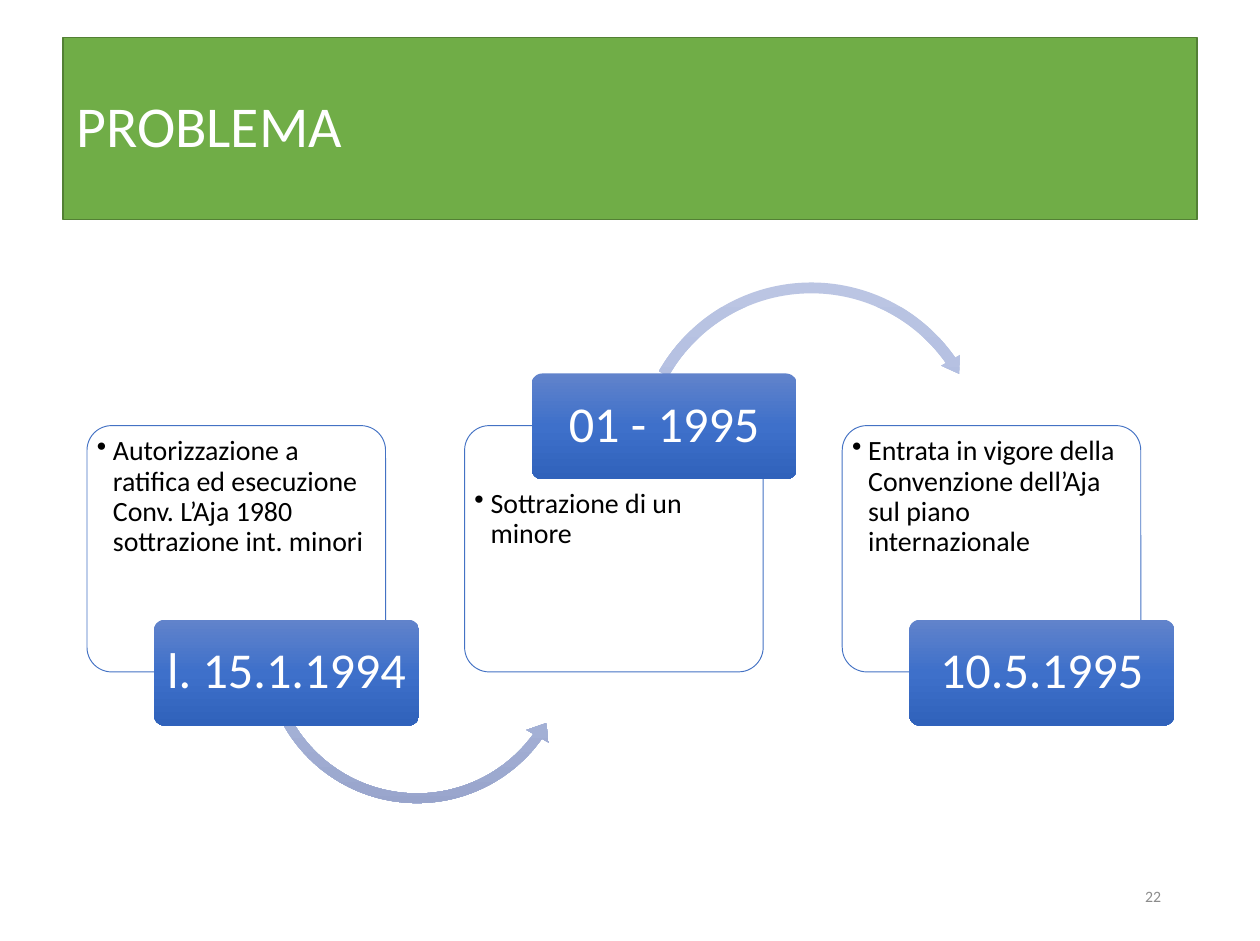
from copy import deepcopy
from dataclasses import dataclass

from lxml import etree
from pptx import Presentation
from pptx.dml.color import RGBColor
from pptx.enum import shapes, text
from pptx.oxml.ns import qn
from pptx.util import Inches, Pt


@dataclass(frozen=True)
class Theme:
    font: str = "Calibri"
    white: str = "FFFFFF"
    black: str = "000000"
    banner: str = "70AD47"
    banner_line: str = "538035"
    card_line: str = "4472C4"
    number: str = "8C8C8C"
    date_gradient: tuple = ("6183CB", "3E70CA", "3062BB")
    arrow_gradient: tuple = ("BBC5E3", "AEBBE0", "98A4CB")
    title_size: float = 31.1
    date_size: float = 27
    body_size: float = 15
    number_size: float = 8.5


def rgb(code):
    return RGBColor.from_string(code)


class SlideBuilder:
    def __init__(self, slide, theme):
        self.slide = slide
        self.theme = theme

    def set_text(self, shape, words, size, color, align, anchor, margins=None, bullet=False):
        """Fill a shape with one paragraph; margins are left, top, right, bottom."""
        frame = shape.text_frame
        frame.word_wrap = True
        frame.auto_size = text.MSO_AUTO_SIZE.NONE
        frame.vertical_anchor = anchor
        if margins:
            (frame.margin_left, frame.margin_top,
             frame.margin_right, frame.margin_bottom) = map(Inches, margins)
        frame.text = words
        paragraph = frame.paragraphs[0]
        paragraph.alignment = align
        paragraph.line_spacing = 0.9
        if bullet:
            properties = paragraph._p.get_or_add_pPr()
            properties.set("marL", str(Inches(0.12)))
            properties.set("indent", str(Inches(-0.12)))
            etree.SubElement(properties, qn("a:buChar")).set("char", "•")
        paragraph.font.name = self.theme.font
        paragraph.font.size = Pt(size)
        paragraph.font.color.rgb = rgb(color)

    def shape(self, kind, left, top, width, height, adjustments):
        shape = self.slide.shapes.add_shape(
            kind, Inches(left), Inches(top), Inches(width), Inches(height))
        shape.shadow.inherit = False
        for index, value in enumerate(adjustments):
            shape.adjustments[index] = value
        return shape

    def shade(self, shape, colors):
        """Give a borderless vertical gradient with evenly spaced colours."""
        shape.line.fill.background()
        shape.fill.gradient()
        shape.fill.gradient_angle = 270
        stop_list = shape._element.spPr.find(".//" + qn("a:gsLst"))
        while len(stop_list) < len(colors):
            stop_list.append(deepcopy(stop_list[0]))
        for index, (stop, color) in enumerate(zip(shape.fill.gradient_stops, colors)):
            stop.color.rgb = rgb(color)
            stop.position = index / (len(colors) - 1)

    def title(self, words):
        banner = self.slide.shapes.title
        banner.left, banner.top = Inches(0.47), Inches(0.28)
        banner.width, banner.height = Inches(8.47), Inches(1.36)
        banner.fill.solid()
        banner.fill.fore_color.rgb = rgb(self.theme.banner)
        banner.line.color.rgb = rgb(self.theme.banner_line)
        banner.line.width = Pt(1)
        self.set_text(banner, words, self.theme.title_size, self.theme.white,
                      text.PP_ALIGN.LEFT, text.MSO_ANCHOR.MIDDLE)

    def card(self, left, top, words, text_top):
        card = self.shape(shapes.MSO_SHAPE.ROUNDED_RECTANGLE, left, top, 2.23, 1.84, [0.1])
        card.fill.solid()
        card.fill.fore_color.rgb = rgb(self.theme.white)
        card.line.color.rgb = rgb(self.theme.card_line)
        card.line.width = Pt(0.5)
        self.set_text(card, words, self.theme.body_size, self.theme.black, text.PP_ALIGN.LEFT,
                      text.MSO_ANCHOR.TOP, (0.02, text_top, 0.02, 0.03), bullet=True)

    def date(self, left, top, words):
        date = self.shape(shapes.MSO_SHAPE.ROUNDED_RECTANGLE, left, top, 1.98, 0.79, [0.1])
        self.shade(date, self.theme.date_gradient)
        self.set_text(date, words, self.theme.date_size, self.theme.white, text.PP_ALIGN.CENTER,
                      text.MSO_ANCHOR.MIDDLE, (0.06, 0.04, 0.06, 0.04))

    def arc_arrow(self, kind, left, top, size, adjustments):
        arrow = self.shape(kind, left, top, size, size, adjustments)
        self.shade(arrow, self.theme.arrow_gradient)

    def page_number(self, number):
        box = self.slide.shapes.add_textbox(
            Inches(6.65), Inches(6.52), Inches(2.12), Inches(0.37))
        self.set_text(box, number, self.theme.number_size, self.theme.number,
                      text.PP_ALIGN.RIGHT, text.MSO_ANCHOR.MIDDLE)


STEPS = [
    ("l. 15.1.1994",
     "Autorizzazione a ratifica ed esecuzione Conv. L’Aja 1980 sottrazione int. minori"),
    ("01 - 1995", "Sottrazione di un minore"),
    ("10.5.1995", "Entrata in vigore della Convenzione dell’Aja sul piano internazionale"),
]
# Adjustments: thickness, head angle, end angle, start angle, head width.
ARROWS = [
    (shapes.MSO_SHAPE.LEFT_CIRCULAR_ARROW, 1.91, 3.65, 2.41,
     (0.03, 3.64, 21.39, 90.25, 0.04)),
    (shapes.MSO_SHAPE.CIRCULAR_ARROW, 4.71, 2.07, 2.7,
     (0.03, 3.23, 195.01, 125.76, 0.03)),
]
FIRST_LEFT, CARD_TOP, STEP_PITCH = 0.65, 3.18, 2.82


def main():
    prs = Presentation()
    prs.slide_width, prs.slide_height = Inches(9.41), Inches(7.03)
    builder = SlideBuilder(prs.slides.add_slide(prs.slide_layouts[5]), Theme())
    builder.title("PROBLEMA")
    for index, (date, event) in enumerate(STEPS):
        left = FIRST_LEFT + index * STEP_PITCH
        date_above = index % 2 == 1
        builder.card(left, CARD_TOP, event, text_top=0.42 if date_above else 0.03)
        if index < len(ARROWS):
            builder.arc_arrow(*ARROWS[index])
        builder.date(left + 0.5, CARD_TOP + (-0.39 if date_above else 1.45), date)
    builder.page_number("22")
    prs.save("out.pptx")


if __name__ == "__main__":
    main()
